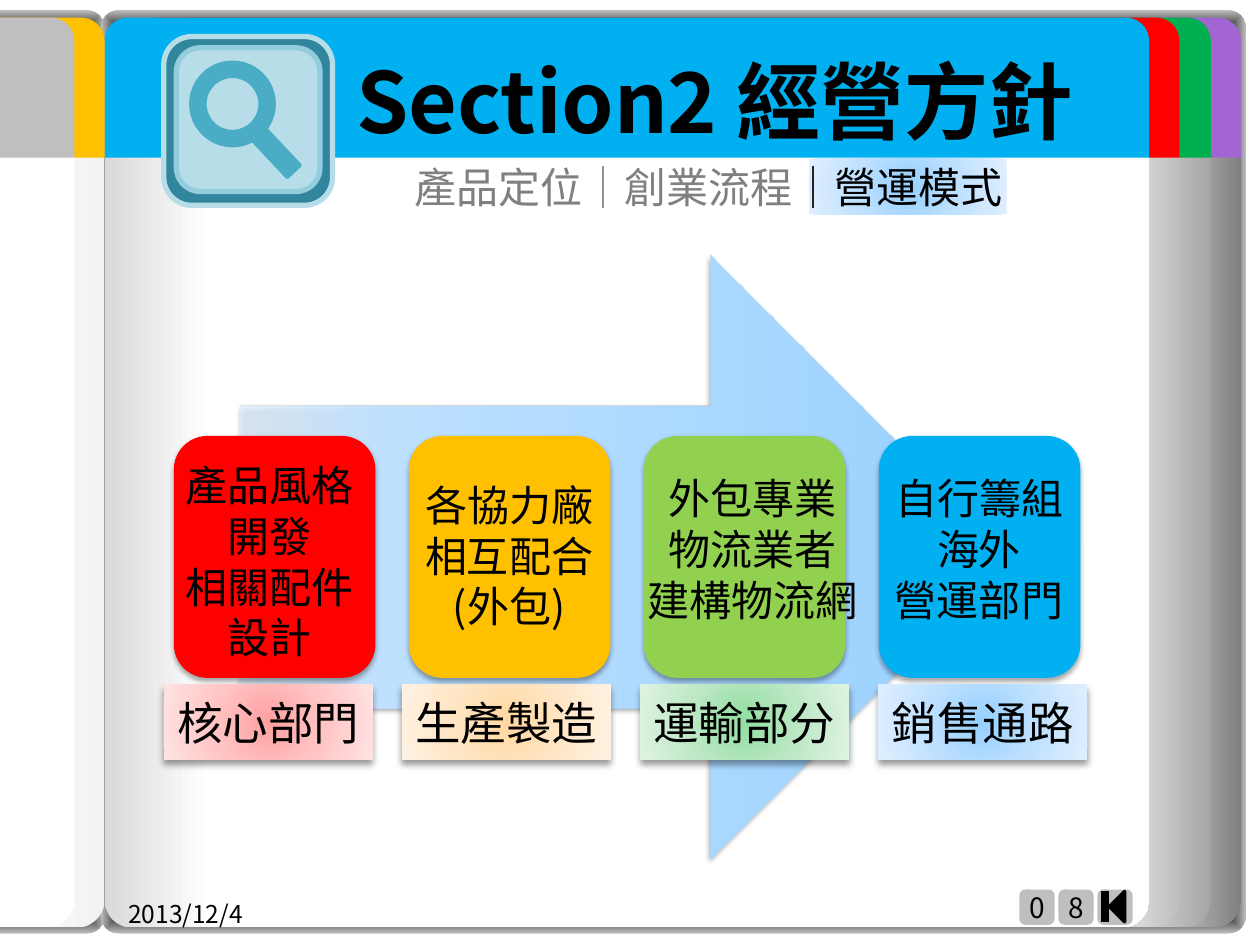
from lxml import etree
from pptx import Presentation, util as u
from pptx.dml.color import RGBColor
from pptx.enum import shapes, text
from pptx.oxml import parse_xml
from pptx.oxml.ns import nsdecls, qn
from pptx.util import Inches

FONT = "Noto Sans CJK SC"
C = {
    "black": "000000", "white": "FFFFFF", "gray": "808080", "silver": "BFBFBF",
    "red": "FF0000", "amber": "FFC000", "lime": "92D050", "blue": "00B0F0",
    "green": "00B050", "purple": "A365D1",
    "teal": "31859C", "aqua": "4BACC6", "aqua_mid": "93CDDD", "aqua_pale": "B7DEE8",
}
# Gradients: (kind, [(position %, colour, opacity %), ...])
FRAME = ("shape", [(95, C["black"], 100), (100, C["silver"], 100)])
GLOW = {
    name: ("circle", [(0, a, 100), (50, b, 100), (100, c, 100)])
    for name, a, b, c in [
        ("red", "FFA0A0", "FFC5C5", "FFE3E3"), ("amber", "FFD8A0", "FFE6C5", "FFF2E3"),
        ("green", "91DEA0", "BDE8C5", "DFF3E3"), ("blue", "96D0FF", "BFE1FF", "E0EFFF")]
}
SOFT, DEEP = (35, 3.1, 1.8), (40, 4, 3)  # shadows: opacity %, blur pt, distance pt
MSO = shapes.MSO_SHAPE

prs = Presentation()
prs.slide_width, prs.slide_height = Inches(10), Inches(7.5)
s = prs.slides.add_slide(prs.slide_layouts[5])


def add_shape(kind, box, fill=None, line=None, shadow=None, adj=None, rot=0):
    """Add a preset shape with a solid, gradient or empty fill."""
    sp = s.shapes.add_shape(kind, *[Inches(v) for v in box])
    sp.rotation = rot
    if adj is not None:
        sp.adjustments[0] = adj
    if fill is None:
        sp.fill.background()
    elif isinstance(fill, str):
        sp.fill.solid()
        sp.fill.fore_color.rgb = RGBColor.from_string(fill)
    else:
        path, stops = fill
        gs = "".join(
            f'<a:gs pos="{pos * 1000}"><a:srgbClr val="{color}">'
            f'<a:alpha val="{alpha * 1000}"/></a:srgbClr></a:gs>'
            for pos, color, alpha in stops)
        shade = '<a:lin ang="10800000" scaled="0"/>' if path == "linear" else (
            f'<a:path path="{path}"><a:fillToRect l="50000" t="50000" '
            'r="50000" b="50000"/></a:path>')
        sp._element.spPr.find(qn("a:prstGeom")).addnext(parse_xml(
            f'<a:gradFill {nsdecls("a")} rotWithShape="1">'
            f'<a:gsLst>{gs}</a:gsLst>{shade}</a:gradFill>'))
    if line:
        sp.line.color.rgb = RGBColor.from_string(line[0])
        sp.line.width = u.Pt(line[1])
    else:
        sp.line.fill.background()
    sp.shadow.inherit = False
    if shadow:
        alpha, blur, dist = shadow
        sp._element.spPr.find(qn("a:effectLst")).append(parse_xml(
            f'<a:outerShdw {nsdecls("a")} blurRad="{u.Pt(blur)}" dist="{u.Pt(dist)}" '
            f'dir="5400000" rotWithShape="0"><a:srgbClr val="{C["black"]}">'
            f'<a:alpha val="{alpha * 1000}"/></a:srgbClr></a:outerShdw>'))
    return sp


def write(sp, paragraphs, size, align=text.PP_ALIGN.CENTER, bold=False, spacing=None):
    """Write paragraphs, each a list of (words, colour name) runs."""
    tf = sp.text_frame
    tf.word_wrap = True
    tf.auto_size = text.MSO_AUTO_SIZE.NONE
    tf.vertical_anchor = text.MSO_ANCHOR.MIDDLE
    for i, runs in enumerate(paragraphs):
        p = tf.add_paragraph() if i else tf.paragraphs[0]
        p.alignment = align
        if spacing:
            p.line_spacing = u.Pt(spacing)
        for words, color in runs:
            r = p.add_run()
            r.text = words
            r.font.size, r.font.bold, r.font.name = u.Pt(size), bold, FONT
            r.font.color.rgb = RGBColor.from_string(C[color])
            etree.SubElement(r.font._element, qn("a:ea")).set("typeface", FONT)


# Binder covers
for left, width in [(-6.86, 7.69), (0.8, 9.09)]:
    add_shape(MSO.ROUNDED_RECTANGLE, (left, 0.08, width, 7.33), FRAME, adj=0.02)

# Tabbed pages: left, width, edge shade, shade reach, tab colour, mirrored
for left, width, edge, reach, tab, mirrored in [
        (1.58, 8.27, C["gray"], 13, "purple", False),
        (1.34, 8.27, "A6A6A6", 13, "green", False),
        (1.09, 8.27, C["silver"], 10, "red", False),
        (0.83, 8.29, "D9D9D9", 10, "blue", True),
        (-7.44, 8.27, "F2F2F2", 10, "amber", False),
        (-7.68, 8.27, C["white"], 10, "silver", False)]:
    shade = ("linear", [(0, edge, 100), (reach, C["white"], 100)])
    page = add_shape(MSO.ROUNDED_RECTANGLE, (left, 0.14, width, 7.22), shade, adj=0.03)
    if mirrored:
        page._element.spPr.find(qn("a:xfrm")).set("flipH", "1")
    add_shape(MSO.ROUND_2_SAME_RECTANGLE, (left, 0.14, width, 1.11), C[tab])

# Date
sp = s.shapes.add_textbox(Inches(0.92), Inches(7.08), Inches(1.64), Inches(0.34))
write(sp, [[("2013/12/4", "black")]], 14, text.PP_ALIGN.LEFT)

# Magnifier icon
add_shape(MSO.ROUNDED_RECTANGLE, (1.3, 0.29, 1.34, 1.34), C["teal"], (C["aqua_pale"], 3))
add_shape(MSO.ROUNDED_RECTANGLE, (1.4, 0.38, 1.14, 1.14), C["aqua_pale"], (C["aqua_mid"], 3))
add_shape(MSO.OVAL, (1.57, 0.55, 0.55, 0.55), line=(C["aqua"], 10))
add_shape(MSO.RECTANGLE, (1.96, 1.13, 0.44, 0.14), C["aqua"], (C["aqua"], 2), rot=46.7)

# Title, brought in front of the tabs
title = s.shapes.title
title.left, title.top, title.width, title.height = [
    Inches(v) for v in (2.64, 0.34, 6.06, 0.91)]
write(title, [[("Section2 經營方針", "black")]], 48, bold=True)
s.shapes._spTree.append(title._element)

# Process arrow
add_shape(MSO.RIGHT_ARROW, (1.91, 2.02, 6.12, 4.8),
          ("linear", [(0, "96D0FF", 100), (82, "BFE1FF", 100), (100, "E0EFFF", 74)]), shadow=SOFT)

# Stage cards: colour, text box, lines
cards = [
    ("red", (1.33, 3.59, 1.62, 1.72), ["產品風格", "開發", "相關配件", "設計"]),
    ("amber", (3.23, 3.75, 1.62, 1.31), ["各協力廠相互配合", "(外包)"]),
    ("lime", (4.97, 3.7, 2, 1.31), ["外包專業", "物流業者", "建構物流網"]),
    ("blue", (6.96, 3.7, 1.62, 1.31), ["自行籌組海外", "營運部門"]),
]
for i, (color, box, lines) in enumerate(cards):
    add_shape(MSO.ROUNDED_RECTANGLE, (1.38 + 1.865 * i, 3.46, 1.6, 1.92), C[color], shadow=SOFT)
    sp = s.shapes.add_textbox(*[Inches(v) for v in box])
    write(sp, [[(words, "black")] for words in lines], 24, spacing=29)

# Department labels
labels = [("red", "核心部門"), ("amber", "生產製造"), ("green", "運輸部分"), ("blue", "銷售通路")]
for i, (color, words) in enumerate(labels):
    sp = add_shape(MSO.RECTANGLE, (1.3 + 1.89 * i, 5.43, 1.66, 0.6), GLOW[color], shadow=DEEP)
    write(sp, [[(words, "black")]], 26)

# Section navigation with the current topic highlighted
add_shape(MSO.RECTANGLE, (6.42, 1.26, 1.57, 0.44), GLOW["blue"])
sp = s.shapes.add_textbox(Inches(2.87), Inches(1.23), Inches(5.51), Inches(0.5))
write(sp, [[("產品定位│創業流程", "gray"), ("│營運模式", "black")]], 24)

# Page number tiles and back button
for i, digit in enumerate(["0", "8", None]):
    sp = add_shape(MSO.ROUNDED_RECTANGLE, (8.09 + 0.31 * i, 7.06, 0.28, 0.28), C["silver"])
    if digit:
        tf = sp.text_frame
        tf.margin_left = tf.margin_right = tf.margin_top = tf.margin_bottom = 0
        write(sp, [[(digit, "black")]], 16)
bar = s.shapes.add_connector(shapes.MSO_CONNECTOR.STRAIGHT,
                             Inches(8.77), Inches(7.07), Inches(8.77), Inches(7.32))
bar.line.color.rgb = RGBColor.from_string(C["black"])
bar.line.width = u.Pt(4.5)
etree.SubElement(bar._element.spPr, qn("a:effectLst"))
add_shape(MSO.RIGHT_TRIANGLE, (8.84, 7.11, 0.17, 0.17), C["black"], (C["black"], 2), rot=45)

prs.save("out.pptx")
